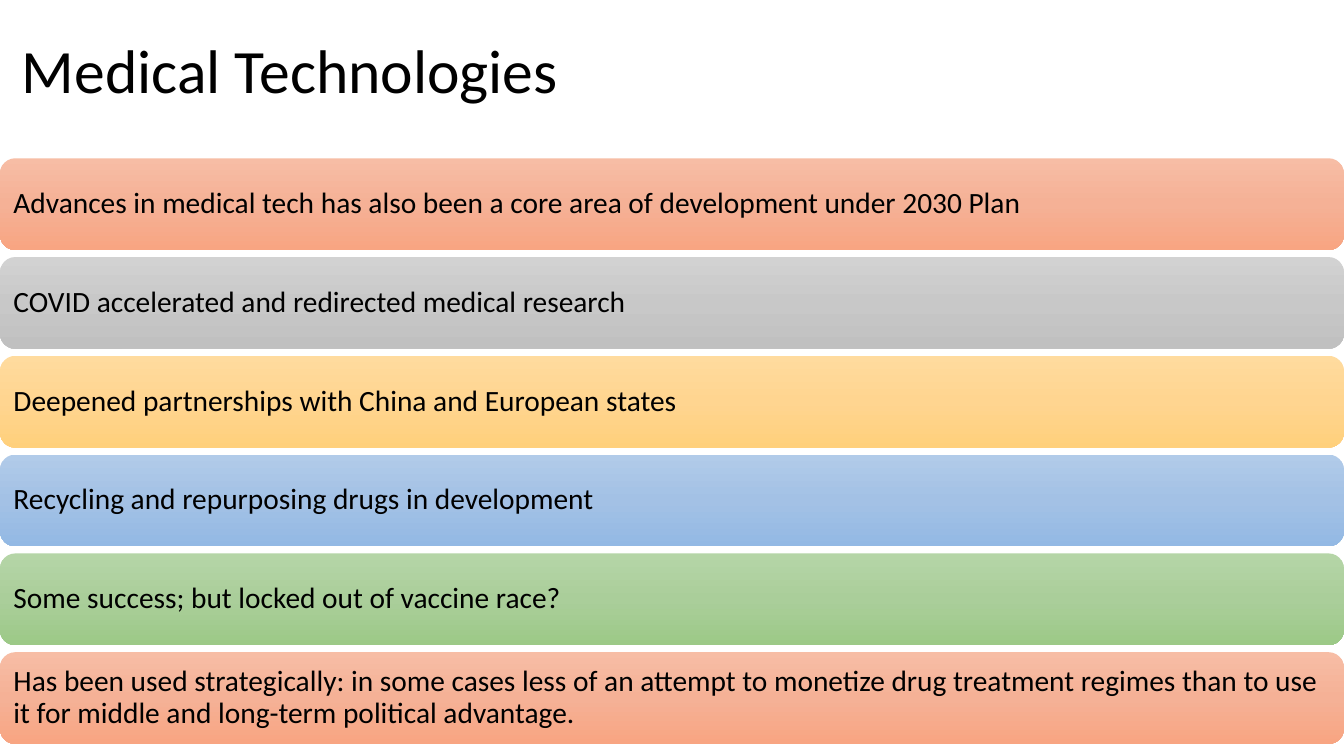
from copy import deepcopy
from dataclasses import dataclass

from pptx import Presentation
from pptx.dml.color import RGBColor
from pptx.enum.shapes import MSO_SHAPE
from pptx.enum.text import MSO_ANCHOR, PP_ALIGN
from pptx.oxml.ns import qn
from pptx.util import Inches, Pt

ROUNDED = MSO_SHAPE.ROUNDED_RECTANGLE
MIDDLE = MSO_ANCHOR.MIDDLE
LEFT = PP_ALIGN.LEFT


@dataclass(frozen=True)
class Theme:
    font: str = "Calibri"
    title_size: int = 44
    body_size: int = 21
    text: str = "000000"
    orange: tuple = ("F7BDA5", "F5B196", "F8A582")
    gray: tuple = ("D2D2D2", "C8C8C8", "C0C0C0")
    gold: tuple = ("FFDB9E", "FFD590", "FFD07C")
    blue: tuple = ("B1CBE9", "A3C1E5", "93B9E4")
    green: tuple = ("B5D5A7", "AACE9A", "9CC987")


theme = Theme()


def write(shape, text, size):
    tf = shape.text_frame
    tf.word_wrap = True
    tf.vertical_anchor = MIDDLE
    p = tf.paragraphs[0]
    p.alignment = LEFT
    p.line_spacing = 0.9
    r = p.add_run()
    r.text = text
    r.font.name = theme.font
    r.font.size = Pt(size)
    r.font.color.rgb = RGBColor.from_string(theme.text)
    return tf


def fill_gradient(shape, colors):
    """Fill from top to bottom with three evenly spaced colours."""
    shape.fill.gradient()
    shape.fill.gradient_angle = 270
    stops = shape.fill._fill._gradFill.find(qn("a:gsLst"))
    stops[-1].addprevious(deepcopy(stops[0]))
    for i, (stop, color) in enumerate(zip(shape.fill.gradient_stops, colors)):
        stop.position = i / 2
        stop.color.rgb = RGBColor.from_string(color)


prs = Presentation()
prs.slide_width = Inches(13.33)
prs.slide_height = Inches(7.5)
s = prs.slides.add_slide(prs.slide_layouts[6])

title = s.shapes.add_textbox(Inches(0.12), Inches(0), Inches(11.5), Inches(1.45))
write(title, "Medical Technologies", theme.title_size)

bars = [
    ("Advances in medical tech has also been a core area of development under 2030 Plan",
     theme.orange),
    ("COVID accelerated and redirected medical research", theme.gray),
    ("Deepened partnerships with China and European states", theme.gold),
    ("Recycling and repurposing drugs in development", theme.blue),
    ("Some success; but locked out of vaccine race?", theme.green),
    ("Has been used strategically: in some cases less of an attempt to monetize drug "
     "treatment regimes than to use it for middle and long-term political advantage.",
     theme.orange),
]
first_top, pitch, bar_height = 1.57, 0.98, 0.91

for row, (text, colors) in enumerate(bars):
    bar = s.shapes.add_shape(ROUNDED, Inches(0), Inches(first_top + row * pitch),
                             prs.slide_width, Inches(bar_height))
    bar.shadow.inherit = False
    bar.line.fill.background()
    fill_gradient(bar, colors)
    tf = write(bar, text, theme.body_size)
    tf.margin_left = tf.margin_right = Inches(0.09)
    tf.margin_top = tf.margin_bottom = Inches(0.09)

prs.save("out.pptx")
